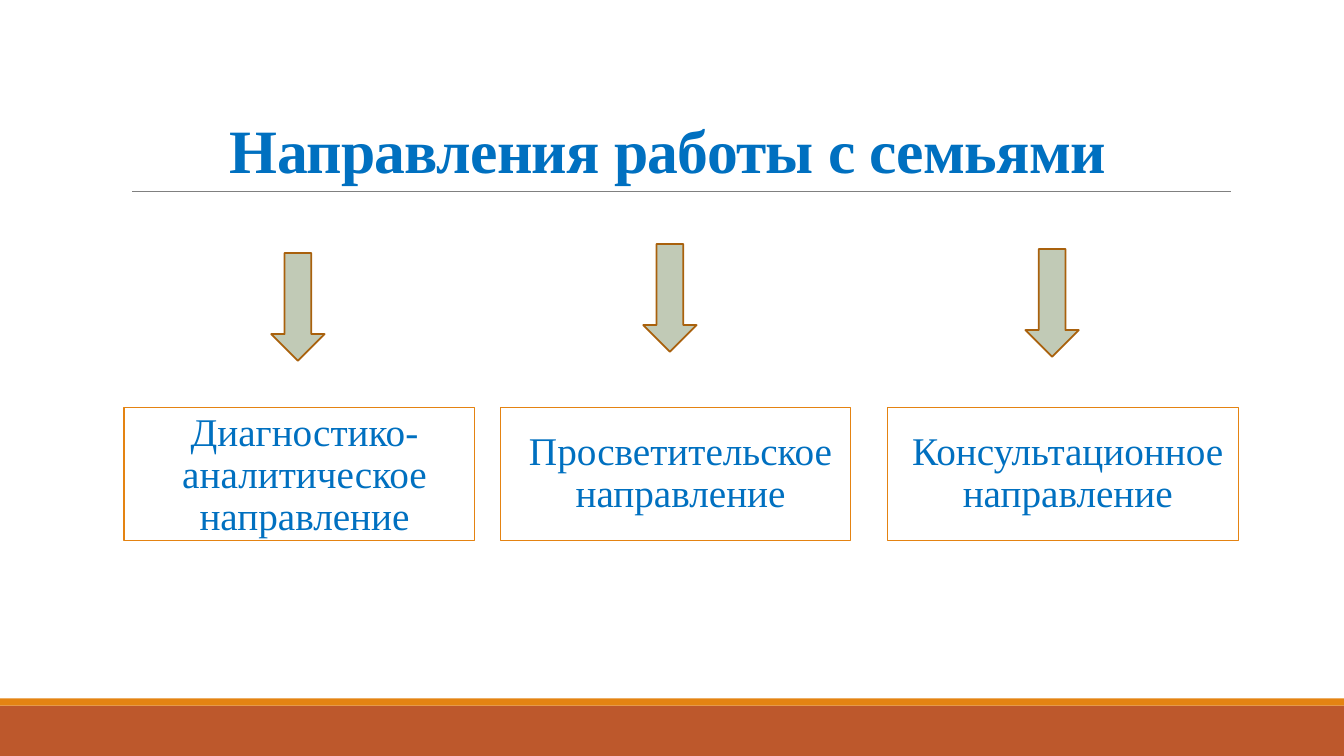
from lxml.etree import SubElement
from pptx import Presentation
from pptx.dml.color import RGBColor
from pptx.enum.shapes import MSO_CONNECTOR as Link, MSO_SHAPE as Shape
from pptx.enum.text import MSO_ANCHOR as Anchor, PP_ALIGN as Align
from pptx.oxml.ns import qn
from pptx.util import Inches, Pt

BLUE, ORANGE, RUST = "0070C0", "E48312", "BD582C"
WIDE, HIGH = 13.33, 7.5

# Text, box left, arrow left and top, anchor
TRACKS = [
    ("Диагностико-аналитическое направление", 1.23, 2.69, 2.51, Anchor.TOP),
    ("Просветительское направление", 4.96, 6.38, 2.42, Anchor.MIDDLE),
    ("Консультационное направление", 8.8, 10.17, 2.47, Anchor.MIDDLE),
]


def tint(code):
    return RGBColor.from_string(code)


def put(obj, **vals):
    for name, val in vals.items():
        setattr(obj, name, val)


def add_block(slide, kind, box, fill=None, line=None, width=1):
    """Add a flat shape; box is left, top, width, height in inches."""
    shape = slide.shapes.add_shape(kind, *map(Inches, box))
    shape.shadow.inherit = False
    if fill:
        shape.fill.solid()
        shape.fill.fore_color.rgb = tint(fill)
    else:
        shape.fill.background()
    if line:
        shape.line.color.rgb = tint(line)
        shape.line.width = Pt(width)
    else:
        shape.line.fill.background()
    return shape


def write(shape, text, size, anchor, space, side=0.1, bold=False):
    """Fill the shape with one centred blue paragraph and return its parts."""
    frame = shape.text_frame
    put(frame, word_wrap=True, vertical_anchor=anchor,
        margin_left=Inches(side), margin_right=Inches(side),
        margin_top=Inches(0.05), margin_bottom=Inches(0.05))
    para = frame.paragraphs[0]
    put(para, alignment=Align.CENTER, line_spacing=space)
    run = para.add_run()
    run.text = text
    put(run.font, name="Times New Roman", size=Pt(size), bold=bold)
    run.font.color.rgb = tint(BLUE)
    return para, run


def add_footer(slide, top):
    add_block(slide, Shape.RECTANGLE, (0, top, WIDE, HIGH - top), RUST)
    add_block(slide, Shape.RECTANGLE, (0, top - 0.07, WIDE, 0.07), ORANGE)


def add_title(slide, left, top, width, height):
    base = top + height
    rule = slide.shapes.add_connector(
        Link.STRAIGHT, *map(Inches, (left + 0.11, base, left + width + 0.01, base)))
    rule.line.color.rgb = tint("808080")
    rule.line.width = Pt(0.5)
    SubElement(rule._element.spPr, qn("a:effectLst"))
    title = slide.shapes.add_textbox(*map(Inches, (left, top, width, height)))
    _, run = write(title, "Направления работы с семьями ", 44,
                   Anchor.BOTTOM, 0.85, bold=True)
    run.font._element.set("spc", "-50")


def add_track(slide, text, box, tip, anchor):
    """Add a framed direction and the arrow above it."""
    frame = add_block(slide, Shape.RECTANGLE, box, line=ORANGE, width=0.75)
    para, _ = write(frame, text, 28, anchor, 0.9, side=0)
    put(para, space_before=Pt(12), space_after=Pt(2))
    props = para._p.get_or_add_pPr()
    props.set("marL", str(Inches(0.1)))
    props.set("indent", str(-Inches(0.1)))
    SubElement(props, qn("a:buFont")).set("typeface", "Calibri")
    SubElement(props, qn("a:buChar")).set("char", " ")
    add_block(slide, Shape.DOWN_ARROW, (*tip, 0.53, 1.07), "C1CAB6", "A9610D", 1.25)


def main():
    deck = Presentation()
    put(deck, slide_width=Inches(WIDE), slide_height=Inches(HIGH))
    slide = deck.slides.add_slide(deck.slide_layouts[6])
    add_footer(slide, 7)
    add_title(slide, 1.2, 0.31, 11, 1.59)
    for text, left, x, y, anchor in TRACKS:
        add_track(slide, text, (left, 4.04, 3.48, 1.32), (x, y), anchor)
    deck.save("out.pptx")


if __name__ == "__main__":
    main()
